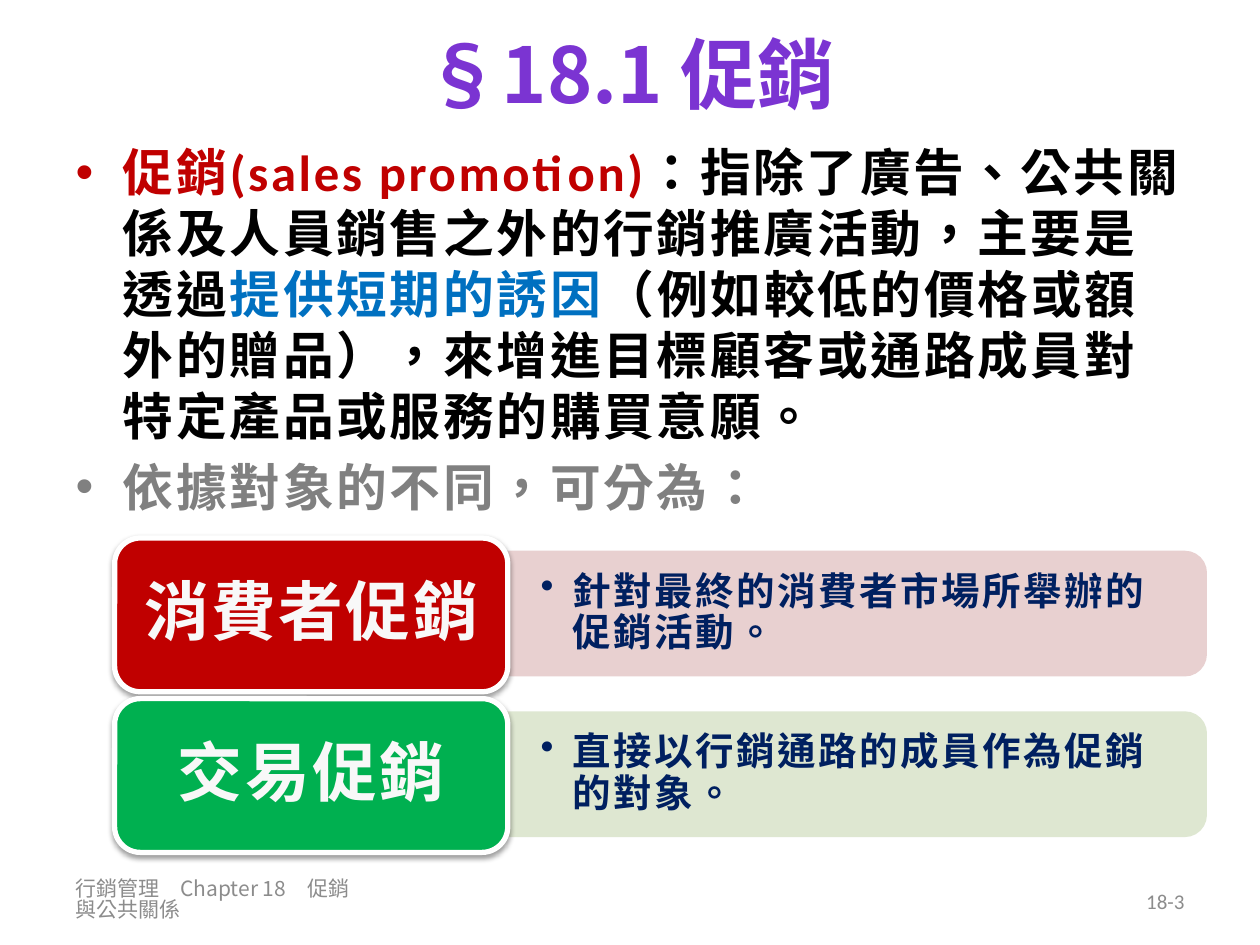
"""Build the sales promotion slide with its two labelled promotion types."""
from dataclasses import dataclass

from lxml.etree import SubElement
from pptx import Presentation
from pptx.dml.color import RGBColor
from pptx.enum.shapes import MSO_SHAPE
from pptx.enum.text import MSO_ANCHOR, MSO_AUTO_SIZE, PP_ALIGN
from pptx.oxml import parse_xml
from pptx.oxml.ns import nsdecls, qn
from pptx.shapes.autoshape import Shape
from pptx.slide import Slide
from pptx.text.text import TextFrame, _Paragraph
from pptx.util import Inches, Pt

PURPLE = RGBColor(0x7B, 0x34, 0xD2)
RED = RGBColor(0xC0, 0x00, 0x00)
GREEN = RGBColor(0x00, 0xB0, 0x50)
BLUE = RGBColor(0x00, 0x70, 0xC0)
NAVY = RGBColor(0x00, 0x20, 0x60)
BLACK = RGBColor(0x00, 0x00, 0x00)
GRAY = RGBColor(0x80, 0x80, 0x80)
FOOTER_GRAY = RGBColor(0x8C, 0x8C, 0x8C)
WHITE = RGBColor(0xFF, 0xFF, 0xFF)
OFF_WHITE = RGBColor(0xF8, 0xF8, 0xF8)
PALE_RED = RGBColor(0xE8, 0xD0, 0xD0)
PALE_GREEN = RGBColor(0xDE, 0xE7, 0xD1)

LATIN_FONT = "Calibri"
CHINESE_FONT = "Noto Sans CJK SC"
FIRST_ROW_TOP = 4.27
ROW_STEP = 1.275


@dataclass
class PromotionType:
    label: str
    description: str
    color: RGBColor
    pale_color: RGBColor


PROMOTION_TYPES = [
    PromotionType("消費者促銷", "針對最終的消費者市場所舉辦的促銷活動。", RED, PALE_RED),
    PromotionType("交易促銷", "直接以行銷通路的成員作為促銷的對象。", GREEN, PALE_GREEN),
]
DEFINITION = [
    ("促銷(sales promotion)", RED),
    ("：指除了廣告、公共關係及人員銷售之外的行銷推廣活動，主要是透過", BLACK),
    ("提供短期的誘因", BLUE),
    ("（例如較低的價格或額外的贈品），來增進目標顧客或通路成員對特定產品或服務的購買意願。", BLACK),
]


def add_text(paragraph: _Paragraph, text: str, *, size: float, color: RGBColor,
             font_name: str = LATIN_FONT, bold: bool = True, spacing: float = 1.5) -> None:
    run = paragraph.add_run()
    run.text = text
    run.font.size = Pt(size)
    run.font.bold = bold
    run.font.color.rgb = color
    run.font.name = font_name
    properties = run._r.get_or_add_rPr()
    properties.set("lang", "zh-TW")
    properties.set("spc", str(int(spacing * 100)))
    SubElement(properties, qn("a:ea")).set("typeface", font_name)


def prepare_frame(frame: TextFrame, horizontal: float = 0.1, vertical: float = 0.05,
                  anchor: MSO_ANCHOR = MSO_ANCHOR.MIDDLE) -> _Paragraph:
    frame.word_wrap = True
    frame.auto_size = MSO_AUTO_SIZE.NONE
    frame.vertical_anchor = anchor
    frame.margin_left = frame.margin_right = Inches(horizontal)
    frame.margin_top = frame.margin_bottom = Inches(vertical)
    return frame.paragraphs[0]


def place(shape: Shape, left: float, top: float, width: float, height: float) -> None:
    shape.left, shape.top = Inches(left), Inches(top)
    shape.width, shape.height = Inches(width), Inches(height)


def add_box(slide: Slide, left: float, top: float, width: float, height: float,
            horizontal: float = 0.1, vertical: float = 0.05) -> _Paragraph:
    box = slide.shapes.add_textbox(Inches(left), Inches(top), Inches(width), Inches(height))
    return prepare_frame(box.text_frame, horizontal, vertical)


def add_panel(slide: Slide, kind: MSO_SHAPE, left: float, top: float, width: float,
              height: float, fill: RGBColor, line: RGBColor, line_width: float) -> Shape:
    panel = slide.shapes.add_shape(
        kind, Inches(left), Inches(top), Inches(width), Inches(height))
    panel.shadow.inherit = False
    panel.fill.solid()
    panel.fill.fore_color.rgb = fill
    panel.line.color.rgb = line
    panel.line.width = Pt(line_width)
    return panel


def add_shadow(shape: Shape) -> None:
    effects = shape._element.spPr.find(qn("a:effectLst"))
    effects.append(parse_xml(
        f'<a:outerShdw {nsdecls("a")} blurRad="39370" dist="20320" dir="5400000" '
        'rotWithShape="0"><a:srgbClr val="000000"><a:alpha val="38000"/></a:srgbClr>'
        '</a:outerShdw>'))


def add_bullet(paragraph: _Paragraph, indent: float) -> None:
    properties = paragraph._p.get_or_add_pPr()
    properties.set("marL", str(Inches(indent)))
    properties.set("indent", str(-Inches(indent)))
    SubElement(properties, qn("a:buChar")).set("char", "•")


def add_promotion_row(slide: Slide, promotion: PromotionType, top: float) -> None:
    panel = add_panel(slide, MSO_SHAPE.ROUND_2_SAME_RECTANGLE, 6.31, top - 2.17, 0.97, 5.54,
                      promotion.pale_color, promotion.pale_color, 2)
    panel.rotation = 90
    description = add_box(slide, 4.02, top + 0.16, 5.5, 0.88, 0.27, 0.14)
    description.line_spacing = 0.9
    add_bullet(description, 0.25)
    add_text(description, promotion.description, size=22, color=NAVY)

    card = add_panel(slide, MSO_SHAPE.ROUNDED_RECTANGLE, 0.91, top, 3.12, 1.22,
                     promotion.color, WHITE, 3)
    add_shadow(card)
    label = prepare_frame(card.text_frame, 0.15, 0.08)
    label.alignment = PP_ALIGN.CENTER
    label.line_spacing = 0.9
    add_text(label, promotion.label, size=37, color=OFF_WHITE)


def main() -> None:
    presentation = Presentation()
    presentation.slide_width, presentation.slide_height = Inches(10), Inches(7.5)
    slide = presentation.slides.add_slide(presentation.slide_layouts[1])

    title = slide.shapes.title
    place(title, 0.5, 0, 9, 1.15)
    heading = prepare_frame(title.text_frame)
    heading.alignment = PP_ALIGN.CENTER
    add_text(heading, "§18.1 促銷", size=44, color=PURPLE, font_name=CHINESE_FONT, spacing=0)

    body = slide.placeholders[1]
    place(body, 0.5, 1.07, 9, 3.39)
    definition = prepare_frame(body.text_frame, anchor=MSO_ANCHOR.TOP)
    definition.space_before = Pt(0)
    for text, color in DEFINITION:
        add_text(definition, text, size=29, color=color)
    add_text(body.text_frame.add_paragraph(), "依據對象的不同，可分為：", size=29, color=GRAY)

    for row, promotion in enumerate(PROMOTION_TYPES):
        add_promotion_row(slide, promotion, FIRST_ROW_TOP + row * ROW_STEP)

    footer = add_box(slide, 0.5, 6.95, 2.45, 0.4)
    footer.line_spacing = 0.82
    add_text(footer, "行銷管理　Chapter 18　促銷與公共關係", size=12, color=FOOTER_GRAY,
             font_name=CHINESE_FONT, bold=False, spacing=0)
    number = add_box(slide, 7.17, 6.95, 2.33, 0.4)
    number.alignment = PP_ALIGN.RIGHT
    add_text(number, "18-3", size=12, color=FOOTER_GRAY, bold=False, spacing=0)

    presentation.save("out.pptx")


if __name__ == "__main__":
    main()
